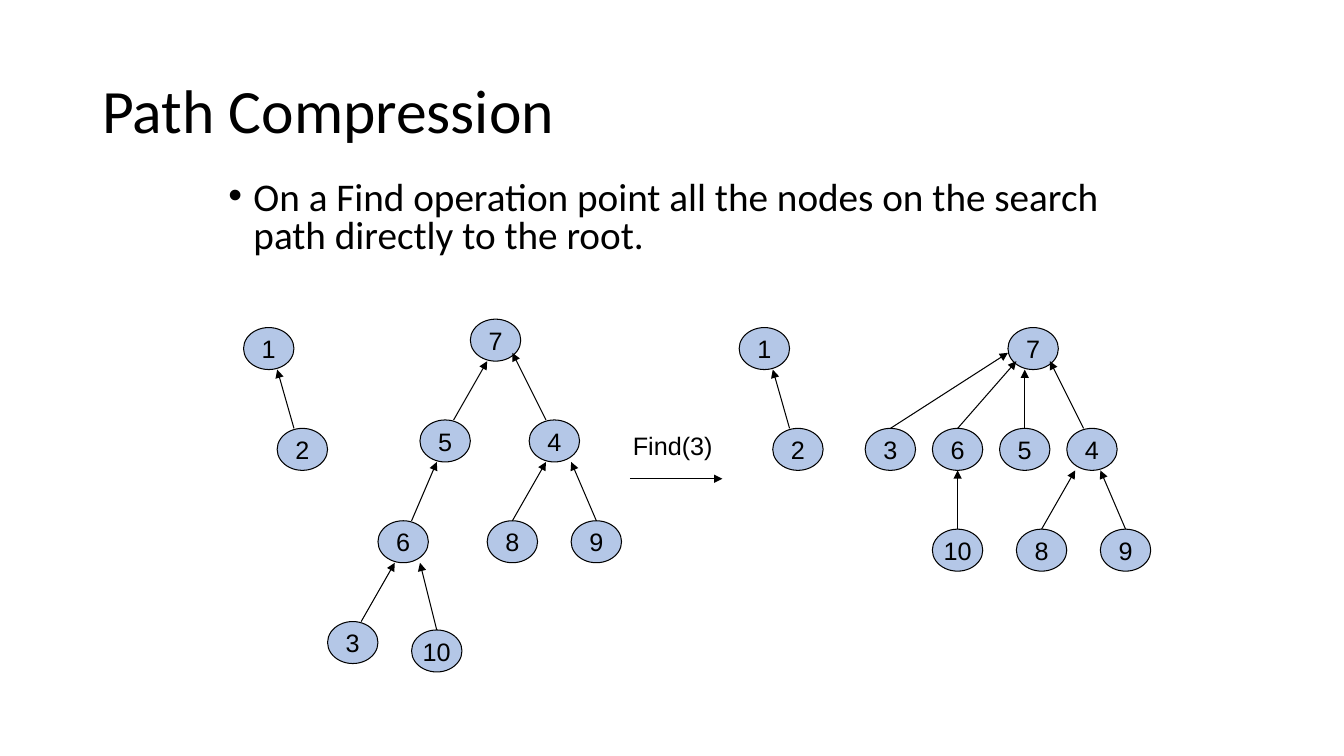
from lxml.etree import SubElement
from pptx import Presentation
from pptx.dml.color import RGBColor
from pptx.enum.shapes import MSO_CONNECTOR as Connector, MSO_SHAPE as Preset
from pptx.enum.text import MSO_ANCHOR as Anchor, PP_ALIGN as Align
from pptx.oxml.ns import qn
from pptx.util import Pt

BLACK = RGBColor(0, 0, 0)
NODE_BLUE = RGBColor(0xB4, 0xC7, 0xE7)
NODE_W, NODE_H = 36, 30


def write(shape, text, font="Arial", size=18, align=Align.LEFT,
          anchor=Anchor.TOP, wrap=False, spacing=1.0, bullet_indent=None):
    frame = shape.text_frame
    frame.word_wrap = wrap
    frame.vertical_anchor = anchor
    paragraph = frame.paragraphs[0]
    paragraph.text = text
    paragraph.alignment = align
    paragraph.line_spacing = spacing
    if bullet_indent:
        props = paragraph._p.get_or_add_pPr()
        props.set("marL", str(Pt(bullet_indent)))
        props.set("indent", str(-Pt(bullet_indent)))
        SubElement(props, qn("a:buFont")).set("typeface", "Arial")
        SubElement(props, qn("a:buChar")).set("char", "•")
    paragraph.font.name = font
    paragraph.font.size = Pt(size)
    paragraph.font.color.rgb = BLACK


def add_arrow(slide, x1, y1, x2, y2):
    arrow = slide.shapes.add_connector(
        Connector.STRAIGHT, Pt(x1), Pt(y1), Pt(x2), Pt(y2))
    arrow.line.color.rgb = BLACK
    arrow.line.width = Pt(0.75)
    SubElement(arrow.line._ln, qn("a:tailEnd")).set("type", "triangle")
    SubElement(arrow._element.spPr, qn("a:effectLst"))


deck = Presentation()
deck.slide_width, deck.slide_height = Pt(960), Pt(540)
slide = deck.slides.add_slide(deck.slide_layouts[5])

# Title and statement
title = slide.shapes.title
title.left, title.top, title.width, title.height = Pt(66), Pt(28.8), Pt(828), Pt(104.4)
write(title, "Path Compression", font="Calibri", size=44,
      anchor=Anchor.MIDDLE, wrap=True, spacing=0.9)

statement = slide.shapes.add_textbox(Pt(156), Pt(126), Pt(648), Pt(66))
write(statement, "On a Find operation point all the nodes on the search path directly to the root.",
      font="Calibri", size=28, wrap=True, spacing=0.8, bullet_indent=18)

# Forests: node -> (left, top, link); link = (parent, start x in the child,
# end x and end y in the parent)
before_find = {
    1: (174, 234, None),
    2: (198, 306, (1, 12, 24, 30)),
    3: (234, 444, (6, 24, 12, 30)),
    4: (378, 300, (7, 12, 30, 24)),
    5: (300, 300, (7, 24, 12, 30)),
    6: (270, 372, (5, 24, 12, 30)),
    7: (336, 228, None),
    8: (348, 372, (4, 18, 12, 30)),
    9: (408, 372, (4, 18, 30, 30)),
    10: (294, 450, (6, 18, 30, 30)),
}
after_find = {
    1: (528, 234, None),
    2: (552, 306, (1, 12, 24, 30)),
    3: (618, 306, (7, 18, 0, 18)),
    4: (762, 306, (7, 12, 30, 24)),
    5: (714, 306, (7, 18, 12, 30)),
    6: (666, 306, (7, 18, 6, 24)),
    7: (720, 234, None),
    8: (726, 378, (4, 18, 6, 30)),
    9: (786, 378, (4, 18, 24, 30)),
    10: (666, 378, (6, 18, 18, 30)),
}

for forest in (before_find, after_find):
    for number, (left, top, link) in forest.items():
        node = slide.shapes.add_shape(
            Preset.OVAL, Pt(left), Pt(top), Pt(NODE_W), Pt(NODE_H))
        node.shadow.inherit = False
        node.fill.solid()
        node.fill.fore_color.rgb = NODE_BLUE
        node.line.color.rgb = BLACK
        node.line.width = Pt(0.75)
        write(node, str(number), align=Align.CENTER, anchor=Anchor.MIDDLE)

    # Each child points up to its parent
    for left, top, link in forest.values():
        if link:
            parent, start_x, end_x, end_y = link
            parent_left, parent_top, _ = forest[parent]
            add_arrow(slide, left + start_x, top, parent_left + end_x, parent_top + end_y)

# Find step between the forests
add_arrow(slide, 450, 342, 516, 342)
find_label = slide.shapes.add_textbox(Pt(445), Pt(304), Pt(72), Pt(28.8))
write(find_label, "Find(3)")

deck.save("out.pptx")
